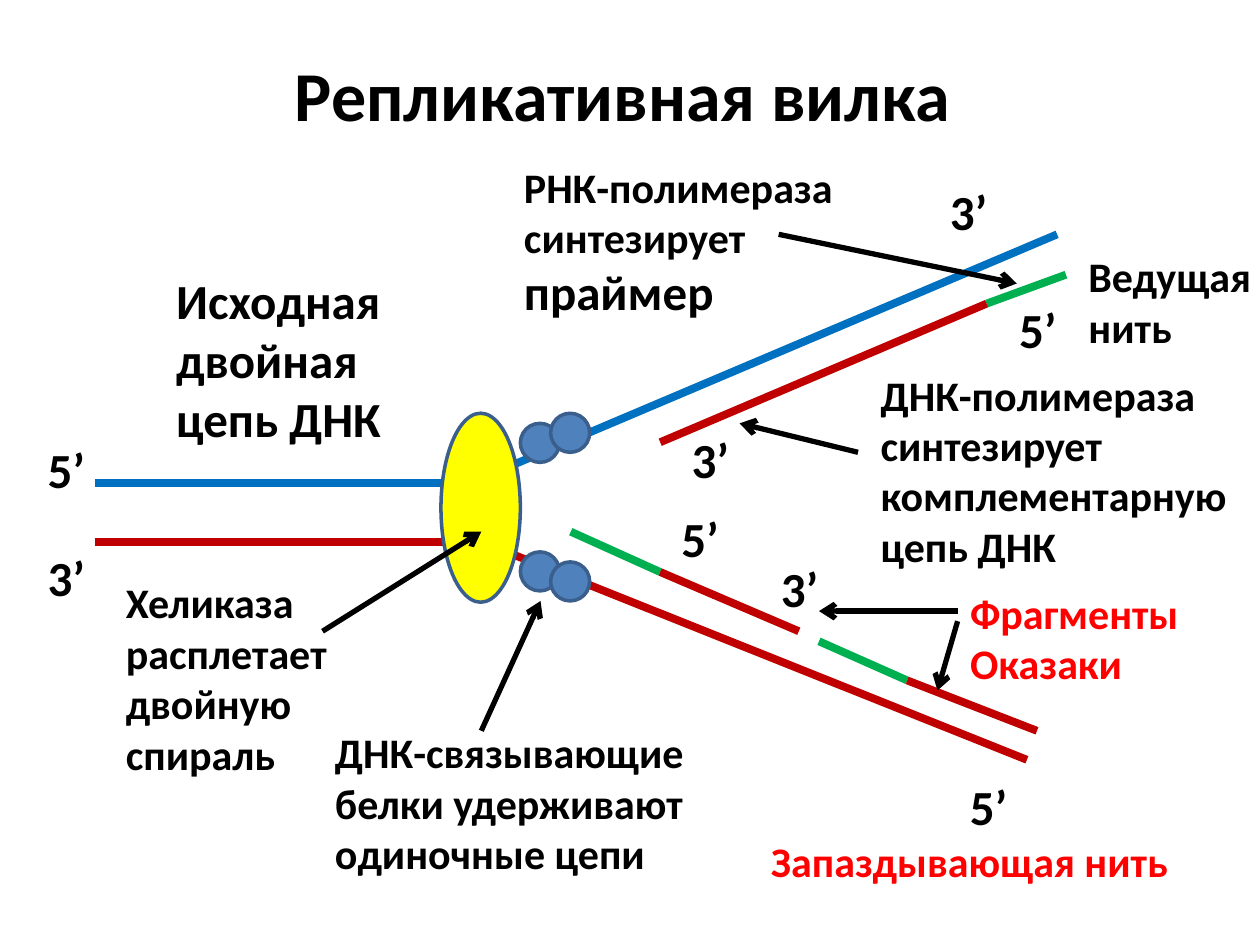
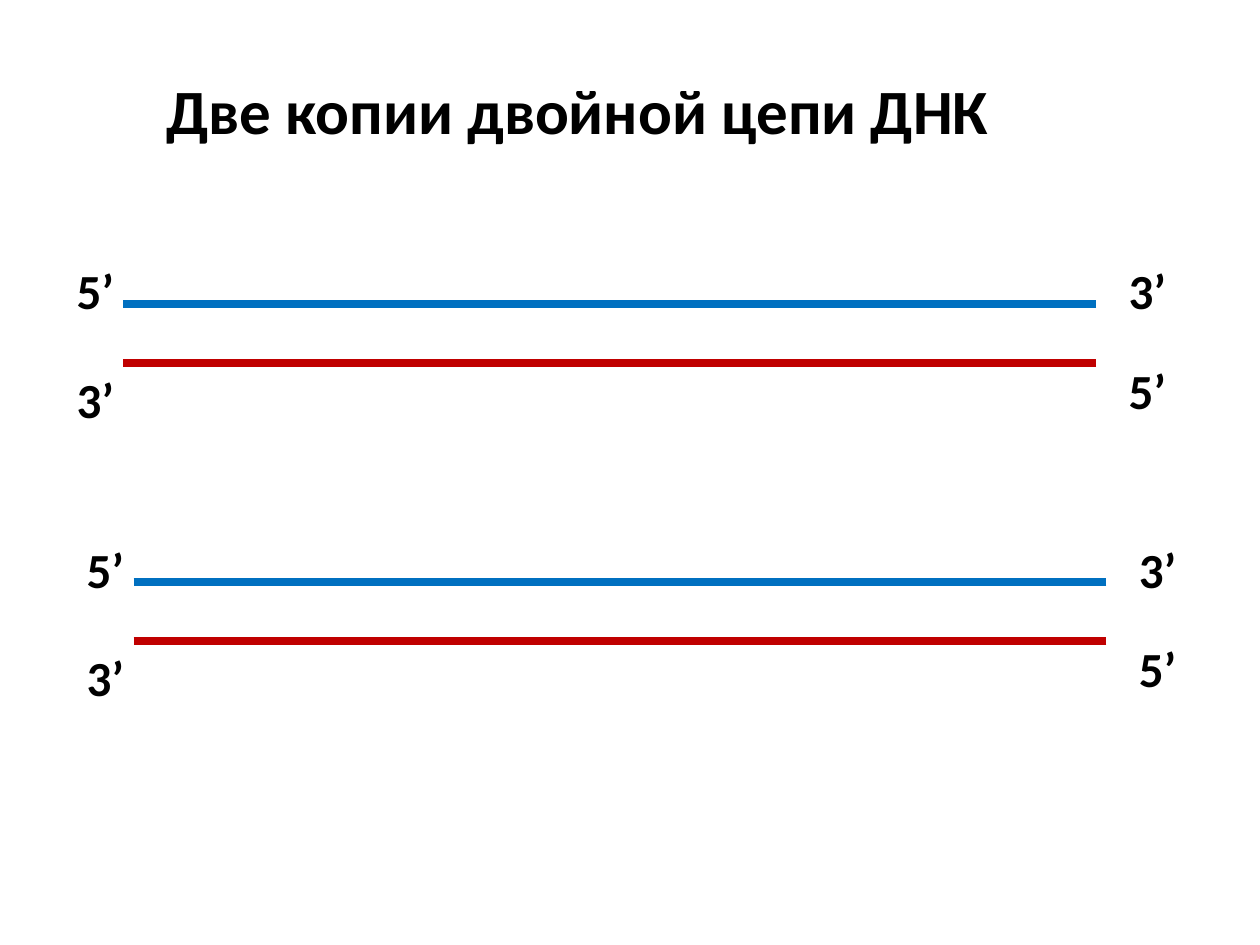
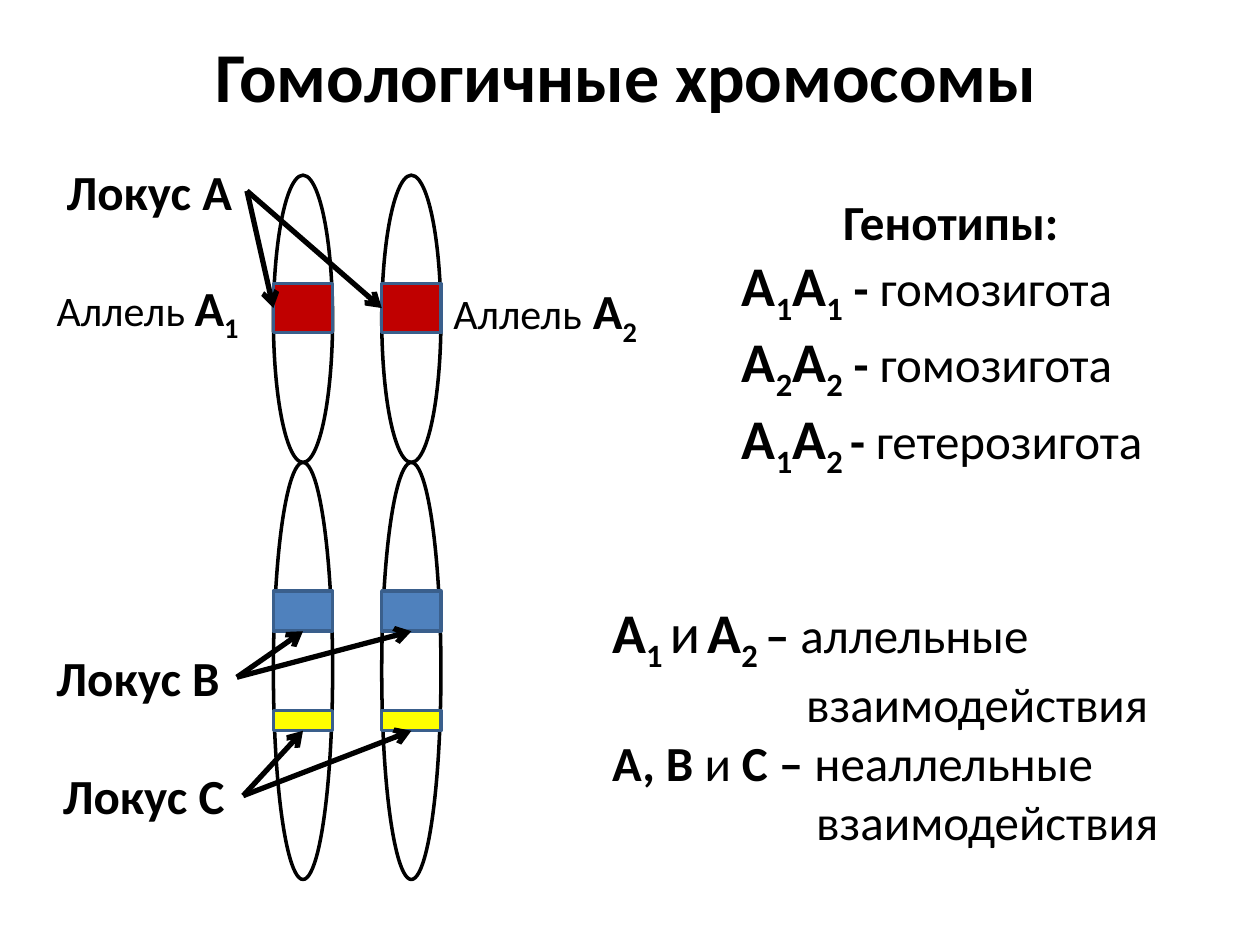
import dataclasses
import typing

import pptx
import pptx.dml.color
import pptx.enum.shapes
import pptx.enum.text
import pptx.oxml
import pptx.oxml.ns
import pptx.util

SCALE = 9144  # EMU per px, 100 px to the inch
FONT = "Calibri"
COLORS = {
    "black": "000000",
    "red": "FF0000",
    "strand": "C00000",
    "blue": "0070C0",
    "green": "00B050",
    "yellow": "FFFF00",
    "steel": "4F81BD",
    "edge": "3A5F8C",
}
SHAPES = pptx.enum.shapes.MSO_SHAPE
CENTER = pptx.enum.text.PP_ALIGN.CENTER
LEFT, BOTTOM, RIGHT = 1, 2, 3  # connection sites


class Run(typing.NamedTuple):
    text: str
    size: int = 28
    bold: bool = True
    low: bool = False


class Line(typing.NamedTuple):
    start: tuple[int, int]
    end: tuple[int, int]
    color: str = "black"


class Note(typing.NamedTuple):
    x: int
    y: int
    w: int
    h: int
    lines: list
    size: int = 24
    color: str = "black"


@dataclasses.dataclass
class Locus:
    label: str
    x: int
    y: int
    top: int
    height: int
    color: str
    site: int


def px(value: int) -> int:
    return value * SCALE


def rgb(name: str) -> pptx.dml.color.RGBColor:
    return pptx.dml.color.RGBColor.from_string(COLORS[name])


def low(text: str) -> Run:
    return Run(text, 32, low=True)


def big(text: str, bold: bool = True) -> Run:
    return Run(text, 32, bold)


def thin(text: str, size: int = 28) -> Run:
    return Run(text, size, False)


def write(slide, x: int, y: int, w: int, h: int, lines: list, *, size: int = 28,
          color: str = "black", wrap: bool = False, aligns: dict | None = None,
          indents: dict | None = None):
    """Add a text box; a line is a string or a list of runs."""
    box = slide.shapes.add_textbox(px(x), px(y), px(w), px(h))
    frame = box.text_frame
    frame.word_wrap = wrap
    frame.auto_size = pptx.enum.text.MSO_AUTO_SIZE.SHAPE_TO_FIT_TEXT
    for i, line in enumerate(lines):
        para = frame.add_paragraph() if i else frame.paragraphs[0]
        para.alignment = (aligns or {}).get(i)
        if i in (indents or {}):
            para._p.get_or_add_pPr().set("marL", str(px(indents[i])))
        for part in [Run(line, size)] if isinstance(line, str) else line:
            run = para.add_run()
            run.text = part.text
            run.font.name = FONT
            run.font.size = pptx.util.Pt(part.size)
            run.font.bold = part.bold
            run.font.color.rgb = rgb(color)
            if part.low:
                run.font._element.set("baseline", "-25000")
    return box


def draw(slide, line: Line, width: float = 4.5, arrow: bool = False):
    """Add a straight line or an arrow."""
    link = slide.shapes.add_connector(
        pptx.enum.shapes.MSO_CONNECTOR.STRAIGHT,
        *map(px, line.start), *map(px, line.end))
    link.line.color.rgb = rgb(line.color)
    link.line.width = pptx.util.Pt(width)
    props = link.element.spPr
    space = pptx.oxml.ns.nsdecls("a")
    if arrow:
        props.find(pptx.oxml.ns.qn("a:ln")).append(
            pptx.oxml.parse_xml(f'<a:tailEnd {space} type="arrow"/>'))
    props.append(pptx.oxml.parse_xml(f"<a:effectLst {space}/>"))
    return link


def point(slide, start: tuple[int, int], end: tuple[int, int]):
    return draw(slide, Line(start, end), 3, True)


def shape(slide, kind, x: int, y: int, w: int, h: int,
          fill: str | None = None, edge: str = "edge"):
    """Add a preset shape, hollow when no fill is given."""
    item = slide.shapes.add_shape(kind, px(x), px(y), px(w), px(h))
    item.shadow.inherit = False
    if fill:
        item.fill.solid()
        item.fill.fore_color.rgb = rgb(fill)
    else:
        item.fill.background()
    item.line.color.rgb = rgb(edge)
    item.line.width = pptx.util.Pt(2)
    return item


def mark(slide, x: int, y: int, digit: int) -> None:
    """Label the end of a strand."""
    write(slide, x, y, 50, 57, [f"{digit}’"])


# Replication fork
STRANDS = [
    Line((75, 430), (382, 430), "strand"),
    Line((815, 603), (382, 430), "strand"),
    Line((75, 383), (382, 383), "blue"),
    Line((839, 186), (374, 383), "blue"),
    Line((846, 218), (783, 241), "green"),
    Line((524, 351), (783, 241), "strand"),
    Line((524, 454), (453, 422), "green"),
    Line((720, 540), (650, 509), "green"),
    Line((634, 501), (524, 454), "strand"),
    Line((823, 580), (720, 540), "strand"),
]
ARROWS = [
    ((256, 501), (382, 422)),
    ((382, 580), (429, 477)),
    ((618, 186), (807, 225)),
    ((681, 359), (587, 336)),
    ((760, 485), (650, 485)),
    ((760, 493), (744, 548)),
]
MARKS = [
    (28, 344, 5), (760, 611, 5), (28, 430, 3), (744, 139, 3), (799, 233, 5),
    (539, 336, 3), (531, 399, 5), (610, 438, 3),
]
NOTES = [
    Note(130, 210, 192, 151, ["Исходная", "двойная", "цепь ДНК"], 28),
    Note(90, 453, 189, 172, ["Хеликаза", "расплетает", "двойную", "спираль"]),
    Note(256, 572, 308, 131,
         ["ДНК-связывающие", "белки удерживают", "одиночные цепи"]),
    Note(406, 123, 275, 138,
         ["РНК-полимераза", "синтезирует", [Run("праймер")]]),
    Note(689, 288, 298, 172,
         ["ДНК-полимераза", "синтезирует", "комплементарную", "цепь ДНК"]),
    Note(854, 194, 158, 91, ["Ведущая", "нить"]),
    Note(602, 658, 339, 50, ["Запаздывающая нить"], color="red"),
    Note(760, 461, 195, 91, ["Фрагменты", "Оказаки"], color="red"),
]


def fork(slide) -> None:
    write(slide, 224, 36, 546, 77, ["Репликативная вилка"], size=40)
    for strand in STRANDS:
        draw(slide, strand)
    # Helicase and binding proteins
    shape(slide, SHAPES.OVAL, 350, 328, 63, 150, "yellow")
    for x, y in [(413, 336), (413, 438), (437, 446), (437, 328)]:
        shape(slide, SHAPES.OVAL, x, y, 31, 31, "steel")
    for start, end in ARROWS:
        point(slide, start, end)
    for x, y, digit in MARKS:
        mark(slide, x, y, digit)
    for note in NOTES:
        write(slide, note.x, note.y, note.w, note.h, note.lines,
              size=note.size, color=note.color)


# Two double strands, each strand in two parts
def helix(slide, x: int, y: int) -> None:
    for drop, color, back in [(47, "strand", 308), (0, "blue", 300)]:
        for start, end in [(0, 308), (772, back)]:
            draw(slide, Line((x + start, y + drop), (x + end, y + drop), color))
    for dx, dy, digit in [(-47, -39, 5), (788, 40, 5),
                          (-47, 47, 3), (788, -39, 3)]:
        mark(slide, x + dx, y + dy, digit)


def twins(slide) -> None:
    write(slide, 122, 52, 732, 71, ["Две копии двойной цепи ДНК"],
          size=36, wrap=True)
    helix(slide, 98, 241)
    helix(slide, 106, 462)


# Homologous chromosomes
COLUMNS = (217, 303)
WIDTH = 47
LOCI = [
    Locus("Локус А", 43, 123, 225, 39, "strand", LEFT),
    Locus("Локус В", 35, 509, 469, 32, "steel", BOTTOM),
    Locus("Локус С", 40, 603, 564, 16, "yellow", BOTTOM),
]


def pair(slide) -> None:
    write(slide, 161, 21, 678, 77, ["Гомологичные хромосомы"], size=40)
    for x in COLUMNS:
        for y, h in [(139, 228), (367, 331)]:
            shape(slide, SHAPES.OVAL, x, y, WIDTH, h, edge="black")
    # Loci with arrows from their labels
    for locus in LOCI:
        label = write(slide, locus.x, locus.y, 153, 57, [locus.label])
        bands = [shape(slide, SHAPES.RECTANGLE, x, locus.top, WIDTH,
                       locus.height, locus.color) for x in COLUMNS]
        for band in bands:
            link = point(slide, (0, 0), (1, 1))
            link.begin_connect(label, RIGHT)
            link.end_connect(band, locus.site)
    # Alleles
    write(slide, 35, 215, 171, 57,
          [[thin("Аллель ", 24), Run("А"), Run("1", low=True)]])
    write(slide, 350, 218, 173, 57,
          [[thin("Аллель", 24), Run(" А"), Run("2", low=True)]])
    # Genotypes
    kinds = [("1", "1", Run(" - "), "гомозигота"),
             ("2", "2", Run(" - "), "гомозигота"),
             ("1", "2 ", Run("- "), "гетерозигота")]
    rows = [[big("А"), low(a), big("А"), low(b), dash, thin(name)]
            for a, b, dash, name in kinds]
    write(slide, 579, 147, 351, 282, ["Генотипы:", *rows],
          wrap=True, aligns={0: CENTER})
    # Interactions
    write(slide, 476, 469, 467, 205, [
        [big("А"), low("1 "), big("и", False), low(" "), big("А"), low("2 "),
         Run("– "), thin("аллельные")],
        [thin("взаимодействия")],
        [Run("А, В "), thin("и"), Run(" С – "), thin("неаллельные")],
        [thin("взаимодействия")],
    ], wrap=True, indents={1: 154, 3: 162})


def main() -> None:
    deck = pptx.Presentation()
    deck.slide_width, deck.slide_height = px(1000), px(750)
    for build in (fork, twins, pair):
        build(deck.slides.add_slide(deck.slide_layouts[6]))
    deck.save("out.pptx")


if __name__ == "__main__":
    main()
